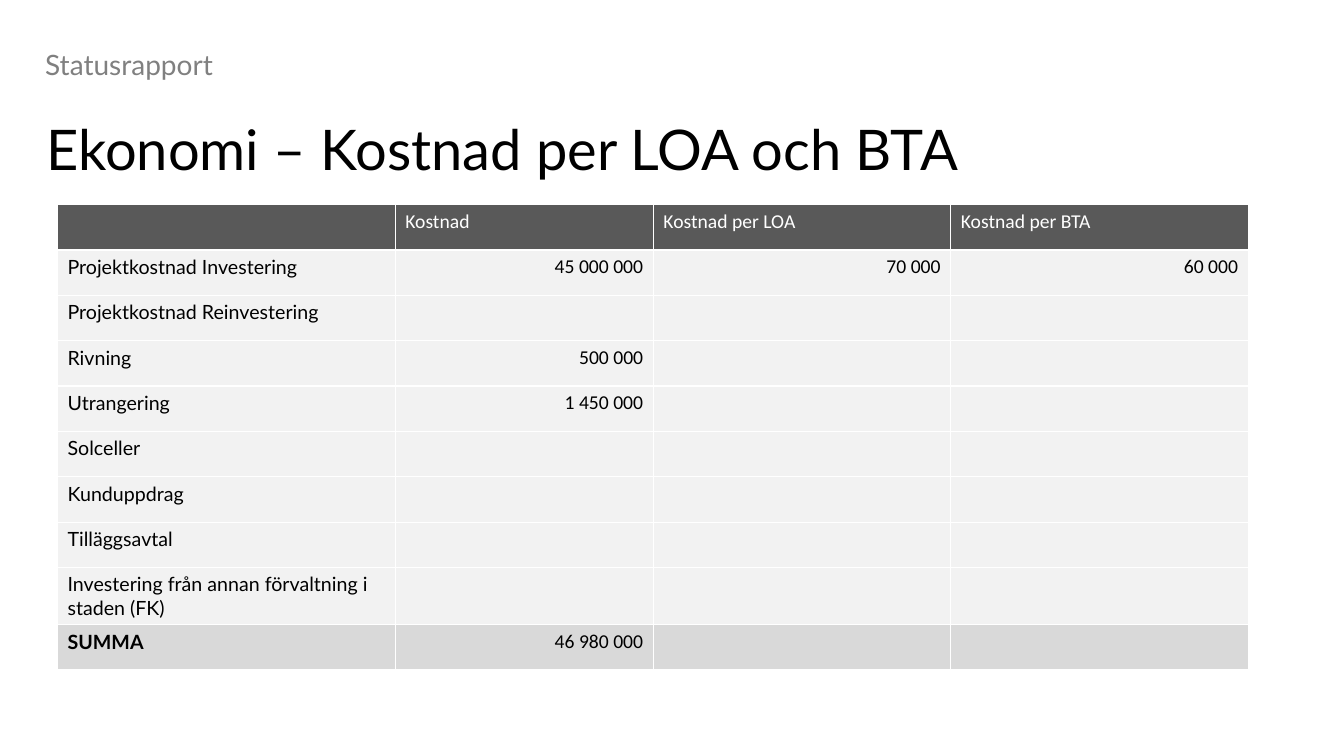
from pptx import Presentation
from pptx.dml.color import RGBColor
from pptx.enum.text import MSO_ANCHOR, PP_ALIGN
from pptx.util import Inches, Pt
from pptx.oxml import parse_xml
from pptx.oxml.ns import nsdecls

WHITE = RGBColor(0xFF, 0xFF, 0xFF)
BLACK = RGBColor(0, 0, 0)
GREY = RGBColor(0x80, 0x80, 0x80)
DARK = RGBColor(0x59, 0x59, 0x59)
LIGHT = RGBColor(0xF2, 0xF2, 0xF2)
MID = RGBColor(0xD9, 0xD9, 0xD9)

LABEL = "Statusrapport"
TITLE = "Ekonomi – Kostnad per LOA och BTA"
ROWS = [
    ("", "Kostnad", "Kostnad per LOA", "Kostnad per BTA"),
    ("Projektkostnad Investering", "45 000 000", "70 000", "60 000"),
    ("Projektkostnad Reinvestering", "", "", ""),
    ("Rivning", "500 000", "", ""),
    ("Utrangering", "1 450 000", "", ""),
    ("Solceller", "", "", ""),
    ("Kunduppdrag", "", "", ""),
    ("Tilläggsavtal", "", "", ""),
    ("Investering från annan förvaltning i staden (FK)", "", "", ""),
    ("SUMMA", "46 980 000", "", ""),
]
WIDTHS = (3.35, 2.56, 2.95, 2.95)
HEIGHTS = [0.45] * 8 + [0.53, 0.45]
LAST = len(ROWS) - 1


def style(para, color, **form):
    """Apply font values to a paragraph."""
    para.font.color.rgb = color
    for key, value in form.items():
        setattr(para.font, key, value)


def write(shape, text, box, size, color):
    """Place one line of text in a shape."""
    shape.left, shape.top, shape.width, shape.height = map(Inches, box)
    frame = shape.text_frame
    frame.text = text
    frame.word_wrap = True
    frame.vertical_anchor = MSO_ANCHOR.TOP
    para = frame.paragraphs[0]
    para.alignment = PP_ALIGN.LEFT
    para.line_spacing = 1.0
    style(para, color, name="Lato", size=Pt(size), bold=False)


def border(cell):
    """Draw thin white lines around a cell."""
    props = cell._tc.get_or_add_tcPr()
    for spot, side in enumerate("LRTB"):
        props.insert(spot, parse_xml(
            f'<a:ln{side} {nsdecls("a")} w="12700"><a:solidFill>'
            f'<a:srgbClr val="{WHITE}"/></a:solidFill></a:ln{side}>'))


def fill_cell(cell, text, row, col):
    """Set the text and look of one cell."""
    cell.fill.solid()
    cell.fill.fore_color.rgb = {0: DARK, LAST: MID}.get(row, LIGHT)
    border(cell)
    cell.text = text
    para = cell.text_frame.paragraphs[0]
    para.alignment = PP_ALIGN.RIGHT if row and col else PP_ALIGN.LEFT
    style(para, BLACK if row else WHITE, size=Pt(14),
          name="Lato" if row and not col else "Calibri",
          bold=row == LAST and not col)


def main():
    """Build the cost slide."""
    deck = Presentation()
    deck.slide_width, deck.slide_height = Inches(13.33), Inches(7.5)
    slide = deck.slides.add_slide(deck.slide_layouts[5])
    write(slide.shapes.title, TITLE, (0.36, 1.09, 10.1, 0.77), 40, BLACK)
    label = slide.shapes.add_textbox(0, 0, 0, 0)
    write(label, LABEL, (0.35, 0.42, 6.54, 0.5), 20, GREY)
    area = map(Inches, (0.57, 2.03, sum(WIDTHS), sum(HEIGHTS)))
    table = slide.shapes.add_table(len(ROWS), len(WIDTHS), *area).table
    for column, width in zip(table.columns, WIDTHS):
        column.width = Inches(width)
    for line, height in zip(table.rows, HEIGHTS):
        line.height = Inches(height)
    for row, texts in enumerate(ROWS):
        for col, text in enumerate(texts):
            fill_cell(table.cell(row, col), text, row, col)
    deck.save("out.pptx")


if __name__ == "__main__":
    main()
